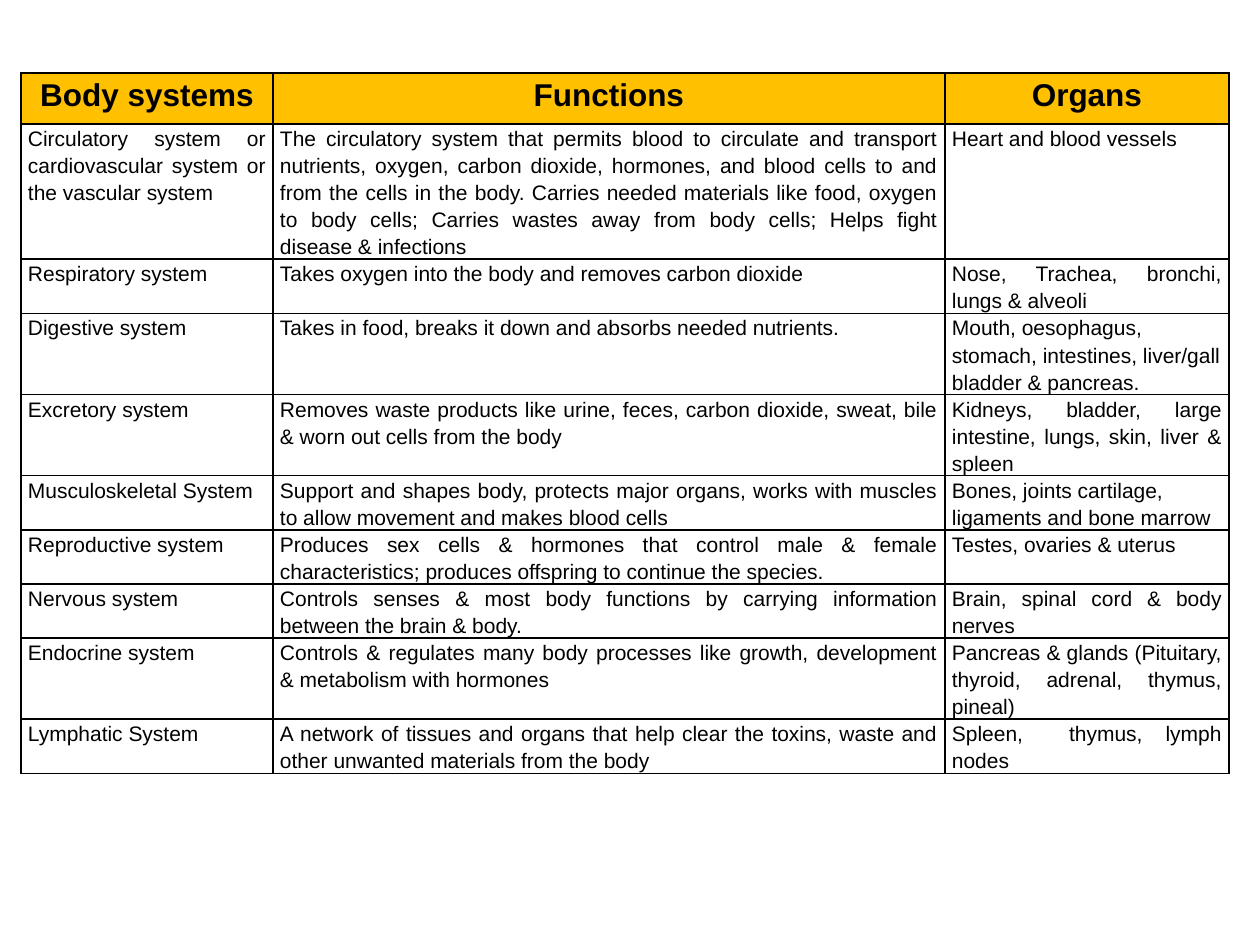
from lxml import etree
from pptx import Presentation
from pptx import util as u
from pptx.dml.color import RGBColor
from pptx.enum import text
from pptx.oxml import ns

SCALE = 914400 / 126
COLOURS = {"header": "FFC000", "ink": "000000"}
COLUMN_WIDTHS = [252, 672, 284]
ROW_HEIGHT = 51
INSETS = {"margin_left": 7, "margin_right": 7, "margin_top": 0, "margin_bottom": 0}
HEADER_FONT = {"name": "Arial", "size": u.Pt(18), "bold": True}
BODY_FONT = {"name": "Arial", "size": u.Pt(12), "bold": False}
LEFT_ALIGNED = {"Digestive system", "Musculoskeletal System"}

HEADINGS = ("Body systems", "Functions", "Organs")
SYSTEMS = [
    ("Circulatory system or cardiovascular system or the vascular system",
     "The circulatory system that permits blood to circulate and "
     "transport nutrients, oxygen, carbon dioxide, hormones, and blood "
     "cells to and from the cells in the body. Carries needed materials like "
     "food, oxygen to body cells; Carries wastes away from body cells; "
     "Helps fight disease & infections",
     "Heart and blood vessels"),
    ("Respiratory system",
     "Takes oxygen into the body and removes carbon dioxide",
     "Nose, Trachea, bronchi, lungs & alveoli"),
    ("Digestive system",
     "Takes in food, breaks it down and absorbs needed nutrients.",
     "Mouth, oesophagus, stomach, intestines, liver/gall bladder & pancreas."),
    ("Excretory system",
     "Removes waste products like urine, feces, carbon dioxide, sweat, bile "
     "& worn out cells from the body",
     "Kidneys, bladder, large intestine, lungs, skin, liver & spleen"),
    ("Musculoskeletal System",
     "Support and shapes body, protects major organs, works with muscles "
     "to allow movement and makes blood cells",
     "Bones, joints cartilage, ligaments and bone marrow"),
    ("Reproductive system",
     "Produces sex cells & hormones that control male & female "
     "characteristics; produces offspring to continue the species.",
     "Testes, ovaries & uterus"),
    ("Nervous system",
     "Controls senses & most body functions by carrying information "
     "between the brain & body.",
     "Brain, spinal cord & body nerves"),
    ("Endocrine system",
     "Controls & regulates many body processes like growth, development "
     "& metabolism with hormones",
     "Pancreas & glands (Pituitary, thyroid, adrenal, thymus, pineal)"),
    ("Lymphatic System",
     "A network of tissues and organs that help clear the toxins, waste and "
     "other unwanted materials from the body",
     "Spleen,  thymus, lymph nodes"),
]


def px(length):
    return u.Emu(round(length * SCALE))


def set_borders(cell):
    properties = cell._tc.get_or_add_tcPr()
    for position, side in enumerate(("lnL", "lnR", "lnT", "lnB")):
        line = etree.Element(ns.qn(f"a:{side}"), w=str(u.Pt(1)))
        fill = etree.SubElement(line, ns.qn("a:solidFill"))
        etree.SubElement(fill, ns.qn("a:srgbClr"), val=COLOURS["ink"])
        properties.insert(position, line)


def fill_cell(cell, wording, font, alignment, colour=None):
    for name, length in INSETS.items():
        setattr(cell, name, px(length))
    if colour:
        cell.fill.solid()
        cell.fill.fore_color.rgb = RGBColor.from_string(colour)
    else:
        cell.fill.background()
    set_borders(cell)
    para = cell.text_frame.paragraphs[0]
    para.alignment = alignment
    para.line_spacing = 1.15
    span = para.add_run()
    span.text = wording
    for name, value in font.items():
        setattr(span.font, name, value)
    span.font.color.rgb = RGBColor.from_string(COLOURS["ink"])


def add_systems_table(page):
    row_count = len(SYSTEMS) + 1
    frame = page.shapes.add_table(
        row_count, len(HEADINGS), px(21), px(73),
        px(sum(COLUMN_WIDTHS)), px(ROW_HEIGHT * row_count))
    table = frame.table
    table.first_row = False
    table.horz_banding = False
    for column, width in zip(table.columns, COLUMN_WIDTHS):
        column.width = px(width)
    for row in table.rows:
        row.height = px(ROW_HEIGHT)
    align = text.PP_ALIGN
    for column, heading in enumerate(HEADINGS):
        fill_cell(table.cell(0, column), heading, HEADER_FONT, align.CENTER, COLOURS["header"])
    for row, system in enumerate(SYSTEMS, 1):
        organs_alignment = align.LEFT if system[0] in LEFT_ALIGNED else align.JUSTIFY
        alignments = (align.JUSTIFY, align.JUSTIFY, organs_alignment)
        for column, (wording, alignment) in enumerate(zip(system, alignments)):
            fill_cell(table.cell(row, column), wording, BODY_FONT, alignment)


def main():
    deck = Presentation()
    deck.slide_width = px(1260)
    deck.slide_height = px(945)
    page = deck.slides.add_slide(deck.slide_layouts[6])
    add_systems_table(page)
    deck.save("out.pptx")


if __name__ == "__main__":
    main()
